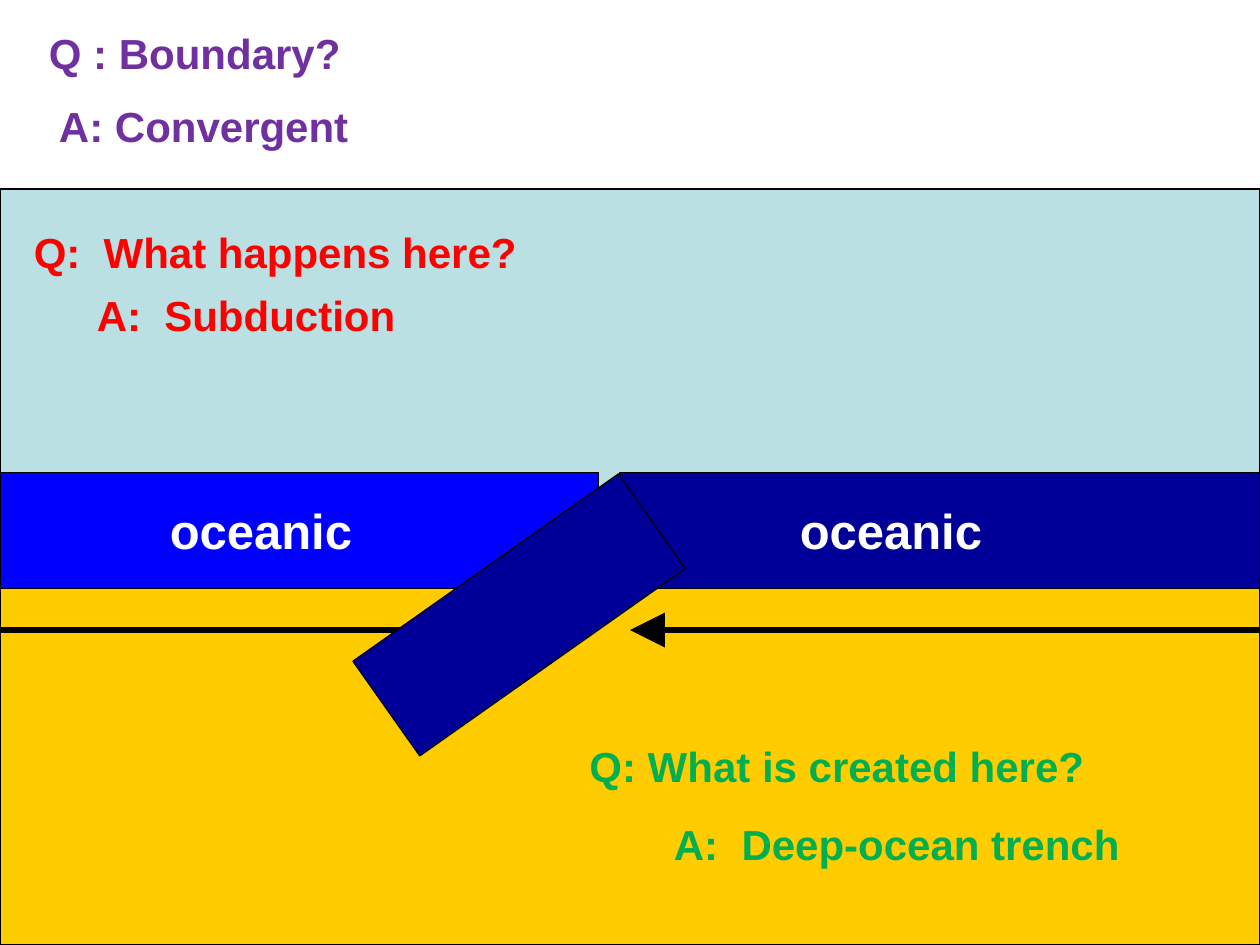
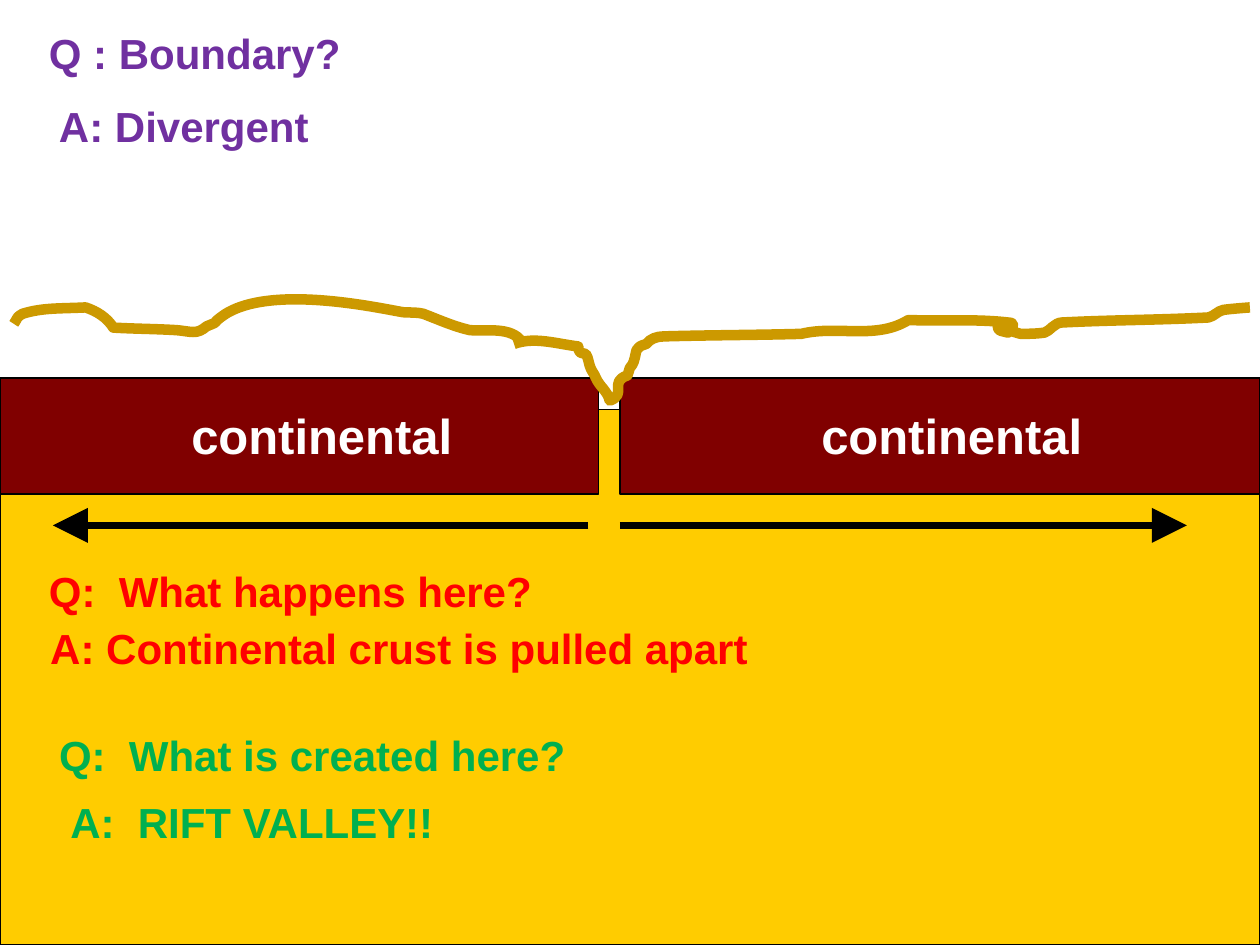
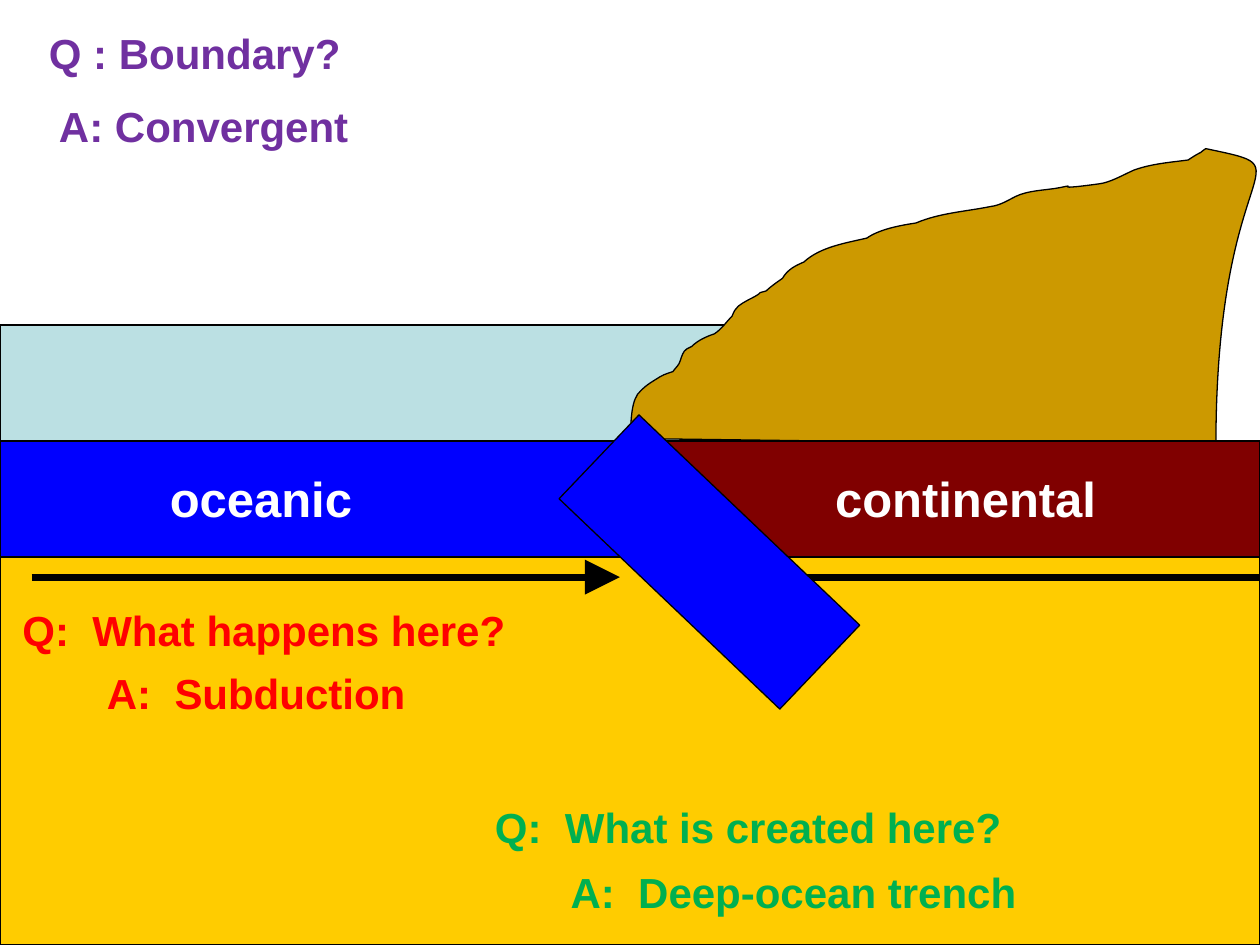
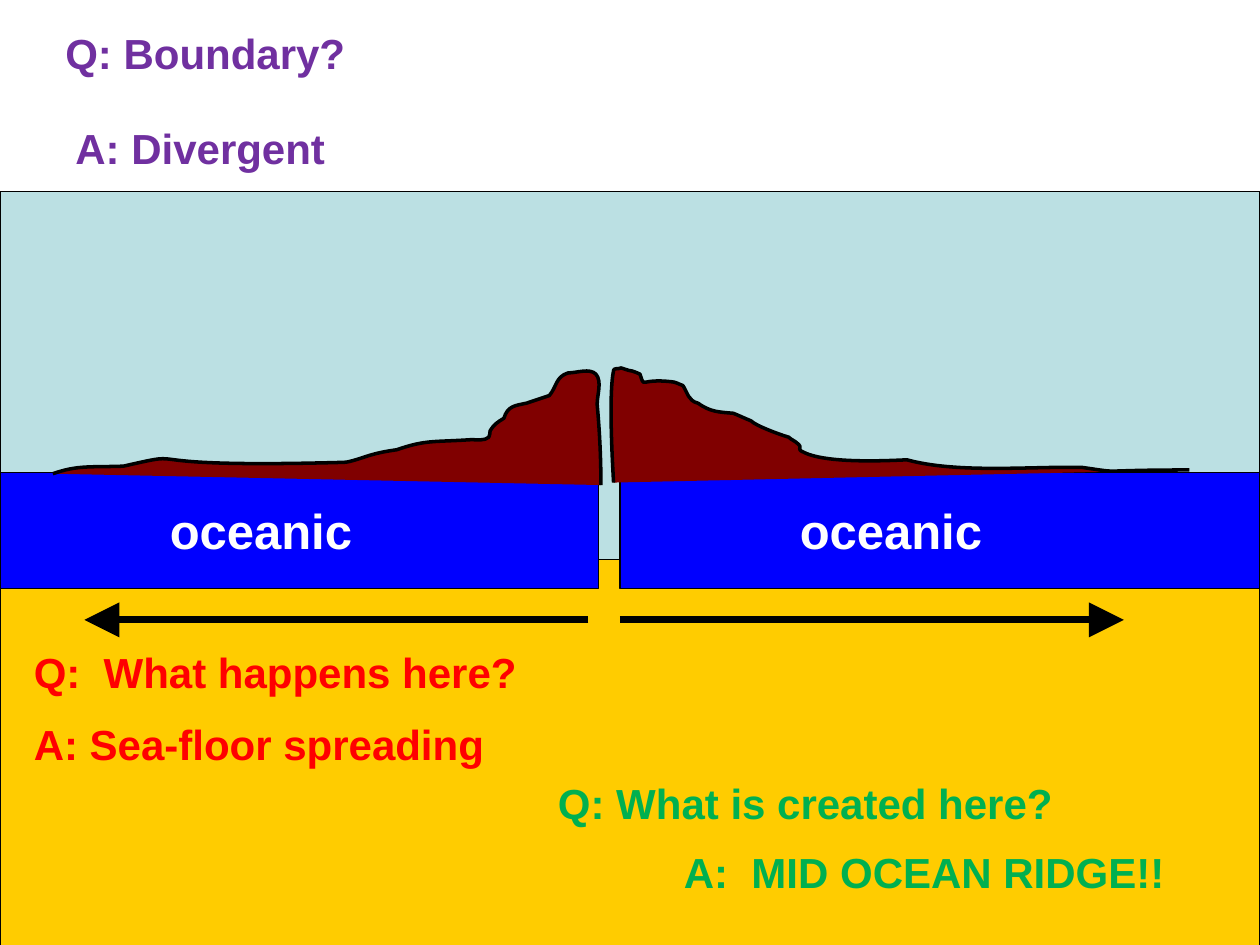
from pptx import Presentation, util as u
from pptx.dml.color import RGBColor
from pptx.enum import shapes as sh, text as tx
from pptx.oxml.ns import qn
from lxml import etree

PX = 9144  # 100 px to the inch
WIDE, HIGH = 1000, 750
THICK = 92  # height of a crust plate


class Theme:
    font = "Arial"
    ink, white = "000000", "FFFFFF"
    mantle, sea = "FFCC00", "BBE0E3"
    ocean, deep, land, soil = "0000FF", "000099", "800000", "CC9900"
    notes = ["7030A0", "FF0000", "00B050"]  # boundary, happening, creation
    label, note = 28, 24
    thin, ridge, rim, arrow = 0.75, 2, 6, 4


T = Theme

# Curves: a start point, then three points for each Bezier piece
RIFT_EAST = [
    (408, 273), (424, 267), (442, 273), (459, 275), (459, 276), (459, 278), (460, 279),
    (461, 281), (464, 280), (465, 281), (467, 284), (467, 287), (468, 290),
    (469, 294), (472, 297), (473, 300), (476, 307), (482, 310), (484, 318),
    (498, 313), (483, 303), (498, 298), (499, 296), (499, 294), (500, 292),
    (501, 290), (503, 289), (503, 287), (506, 278), (503, 276), (513, 273),
    (516, 269), (521, 267), (527, 267), (563, 266), (600, 266), (636, 265),
    (665, 258), (695, 270), (721, 254), (747, 255), (774, 253), (800, 256),
    (809, 256), (800, 263), (800, 264), (797, 263), (792, 263), (792, 260),
    (792, 257), (797, 261), (800, 262), (803, 263), (810, 265), (810, 265),
    (816, 265), (822, 265), (829, 264), (833, 263), (837, 256), (843, 256),
    (881, 254), (920, 254), (959, 252), (964, 251), (966, 247), (971, 246),
    (978, 245), (992, 244), (992, 244)]
RIFT_WEST = [
    (414, 271), (406, 259), (385, 263), (373, 262), (360, 259), (349, 254), (336, 249),
    (332, 248), (327, 248), (322, 248), (315, 248), (213, 222), (175, 252),
    (167, 258), (176, 254), (164, 259), (156, 266), (152, 263), (140, 262),
    (123, 261), (107, 261), (90, 260), (85, 252), (77, 247), (68, 244),
    (49, 245), (34, 244), (18, 249), (16, 250), (15, 251), (14, 252),
    (13, 254), (11, 257), (11, 257)]
COAST = [
    (500, 348), (501, 340), (500, 322), (506, 313), (512, 306), (516, 304), (524, 299),
    (527, 297), (534, 295), (534, 295), (536, 292), (539, 290), (540, 286),
    (541, 283), (542, 279), (545, 277), (546, 276), (548, 276), (549, 275),
    (554, 270), (561, 267), (567, 265), (573, 261), (576, 256), (581, 251),
    (584, 243), (587, 242), (594, 238), (610, 230), (597, 234), (608, 231),
    (612, 227), (621, 221), (621, 221), (625, 214), (631, 211), (638, 208),
    (651, 196), (671, 193), (688, 189), (698, 182), (714, 179), (727, 177),
    (746, 169), (766, 168), (786, 164), (794, 163), (800, 159), (806, 156),
    (816, 151), (831, 151), (841, 149), (860, 145), (828, 152), (872, 146),
    (881, 145), (891, 139), (900, 135), (914, 130), (928, 129), (943, 127),
    (946, 125), (949, 123), (953, 121), (954, 120), (957, 118), (957, 118),
    (1042, 136), (965, 117), (965, 354)]
RIDGE_WEST = [
    (42, 376), (62, 369), (72, 371), (98, 370), (160, 356), (89, 372), (273, 367),
    (278, 367), (291, 362), (295, 361), (302, 359), (308, 358), (315, 357),
    (338, 349), (344, 351), (374, 349), (379, 349), (385, 350), (388, 347),
    (389, 345), (389, 343), (389, 342), (392, 337), (395, 335), (400, 332),
    (403, 322), (409, 322), (418, 320), (424, 318), (430, 316), (436, 314),
    (442, 307), (441, 299), (451, 296), (458, 296), (468, 292), (473, 297),
    (478, 303), (474, 313), (474, 321), (476, 343), (477, 364), (477, 385)]
RIDGE_EAST = [
    (487, 383), (486, 366), (483, 313), (487, 294), (487, 292), (491, 293), (493, 292),
    (495, 293), (497, 293), (499, 294), (502, 294), (508, 297), (508, 297),
    (512, 309), (507, 300), (533, 303), (536, 303), (539, 305), (542, 306),
    (546, 312), (546, 318), (554, 320), (564, 327), (570, 327), (582, 328),
    (587, 330), (591, 332), (596, 334), (600, 338), (619, 345), (626, 347),
    (628, 349), (631, 350), (633, 352), (638, 356), (631, 356), (638, 359),
    (658, 369), (714, 365), (720, 365), (760, 376), (820, 370), (859, 371),
    (894, 376), (865, 373), (944, 373)]

# Each slide: layers (top, width, height, fill), plates (left, width, fill,
# label, label left), arrows (from, to), notes (left, top, width, text)
SLIDES = [
    dict(
        layers=[(442, WIDE, 308, T.mantle), (150, WIDE, 292, T.sea)],
        top=375,
        plates=[(0, 475, T.ocean, "oceanic", 125), (492, 508, T.deep, "oceanic", 625)],
        level=500, arrows=[(0, 467), (WIDE, 500)],
        slab=(283, 442, 258, 324.8, T.deep),
        notes=[(29, 17, 538, "Q : Boundary?"), (37, 75, 530, "A: Convergent"),
               (17, 175, 583, "Q:  What happens here?"), (67, 225, 1033, "A:  Subduction"),
               (458, 583, 742, "Q: What is created here?"),
               (525, 645, 842, "A:  Deep-ocean trench")]),
    dict(
        layers=[(325, WIDE, 425, T.mantle)],
        top=300,
        plates=[(0, 475, T.land, "continental", 142), (492, 508, T.land, "continental", 642)],
        level=417, arrows=[(492, 942), (467, 42)],
        curves=[(RIFT_EAST, None, T.soil, T.rim), (RIFT_WEST, None, T.soil, T.rim)],
        notes=[(29, 17, 538, "Q : Boundary?"), (37, 75, 530, "A: Divergent"),
               (29, 444, 583, "Q:  What happens here?"),
               (30, 489, 742, "A: Continental crust is pulled apart"),
               (37, 574, 742, "Q:  What is created here?"),
               (46, 627, 383, "A:  RIFT VALLEY!!")]),
    dict(
        layers=[(442, WIDE, 308, T.mantle), (258, 583, 183, T.sea)],
        under=[(COAST, T.soil, T.ink, T.thin), ([COAST[0], COAST[-1]], None, T.ink, T.thin)],
        top=350,
        plates=[(0, 508, T.ocean, "oceanic", 125), (508, 492, T.land, "continental", 653)],
        level=458, arrows=[(25, 492), (1025, 525)],
        slab=(442, 400, 242, 43.6, T.ocean),
        notes=[(29, 17, 538, "Q : Boundary?"), (37, 75, 530, "A: Convergent"),
               (8, 475, 583, "Q:  What happens here?"), (75, 525, 358, "A:  Subduction"),
               (383, 631, 742, "Q:  What is created here?"),
               (443, 683, 942, "A:  Deep-ocean trench")]),
    dict(
        layers=[(444, WIDE, 308, T.mantle), (152, WIDE, 292, T.sea)],
        top=375,
        plates=[(0, 475, T.ocean, "oceanic", 125), (492, 508, T.ocean, "oceanic", 625)],
        level=492, arrows=[(492, 892), (467, 67)],
        curves=[(RIDGE_WEST, T.land, T.ink, T.ridge), (RIDGE_EAST, T.land, T.ink, T.ridge)],
        notes=[(42, 17, 517, "Q: Boundary?"), (50, 92, 517, "A: Divergent"),
               (17, 508, 583, "Q:  What happens here?"),
               (17, 565, 517, "A: Sea-floor spreading"),
               (433, 612, 742, "Q: What is created here?"),
               (517, 667, 433, "A:  MID OCEAN RIDGE!!", tx.PP_ALIGN.CENTER)]),
]


def write(slide, words, x, y, w, h=50, size=T.note, color=T.white, align=None):
    box = slide.shapes.add_textbox(x * PX, y * PX, w * PX, h * PX)
    frame = box.text_frame
    frame.word_wrap = True
    frame.auto_size = tx.MSO_AUTO_SIZE.SHAPE_TO_FIT_TEXT
    para = frame.paragraphs[0]
    para.alignment = align
    run = para.add_run()
    run.text = words
    run.font.name, run.font.size, run.font.bold = T.font, u.Pt(size), True
    run.font.color.rgb = RGBColor.from_string(color)


def draw(slide, pts=None, rect=None, fill=None, line=T.ink, width=T.thin, turn=0):
    """Draw a rectangle, a straight line (two points) or a chain of curves."""
    if rect:
        form = slide.shapes.add_shape(sh.MSO_SHAPE.RECTANGLE, *[n * PX for n in rect])
        form.rotation = turn
    elif len(pts) == 2:
        ends = [n * PX for pt in pts for n in pt]
        form = slide.shapes.add_connector(sh.MSO_CONNECTOR.STRAIGHT, *ends)
        etree.SubElement(form._element.spPr, qn("a:effectLst"))
    else:
        pen = slide.shapes.build_freeform(*pts[0], scale=PX)
        pen.add_line_segments(pts[1:], close=False)
        form = pen.convert_to_shape()
        # Each three straight steps become one cubic curve
        steps = list(form._element.iter(qn("a:lnTo")))
        for i in range(0, len(steps), 3):
            curve = etree.Element(qn("a:cubicBezTo"))
            steps[i].addprevious(curve)
            for step in steps[i:i + 3]:
                curve.append(step[0])
                step.getparent().remove(step)
    if rect or len(pts) > 2:
        form.shadow.inherit = False
        if fill:
            form.fill.solid()
            form.fill.fore_color.rgb = RGBColor.from_string(fill)
        else:
            form.fill.background()
    form.line.color.rgb = RGBColor.from_string(line)
    form.line.width = u.Pt(width)
    return form


deck = Presentation()
deck.slide_width, deck.slide_height = WIDE * PX, HIGH * PX

for data in SLIDES:
    slide = deck.slides.add_slide(deck.slide_layouts[6])

    # Mantle, water and coast
    for y, w, h, fill in data["layers"]:
        draw(slide, rect=(0, y, w, h), fill=fill)
    for pts, fill, line, width in data.get("under", []):
        draw(slide, pts, fill=fill, line=line, width=width)

    # Crust plates with their labels
    top = data["top"]
    for x, w, fill, name, left in data["plates"]:
        draw(slide, rect=(x, top, w, THICK), fill=fill)
        write(slide, name, left, top + 17, 300, h=57, size=T.label)

    # Arrows of motion
    for start, end in data["arrows"]:
        arrow = draw(slide, [(start, data["level"]), (end, data["level"])], width=T.arrow)
        etree.SubElement(arrow.line._get_or_add_ln(), qn("a:tailEnd"),
                         type="triangle", w="lg", len="lg")

    # Sinking slab or surface relief
    if "slab" in data:
        x, y, w, turn, fill = data["slab"]
        draw(slide, rect=(x, y, w, THICK), fill=fill, turn=turn)
    for pts, fill, line, width in data.get("curves", []):
        draw(slide, pts, fill=fill, line=line, width=width)

    # Questions and answers, one colour for each pair
    for i, (x, y, w, words, *align) in enumerate(data["notes"]):
        write(slide, words, x, y, w, color=T.notes[i // 2], align=align[0] if align else None)

deck.save("out.pptx")
